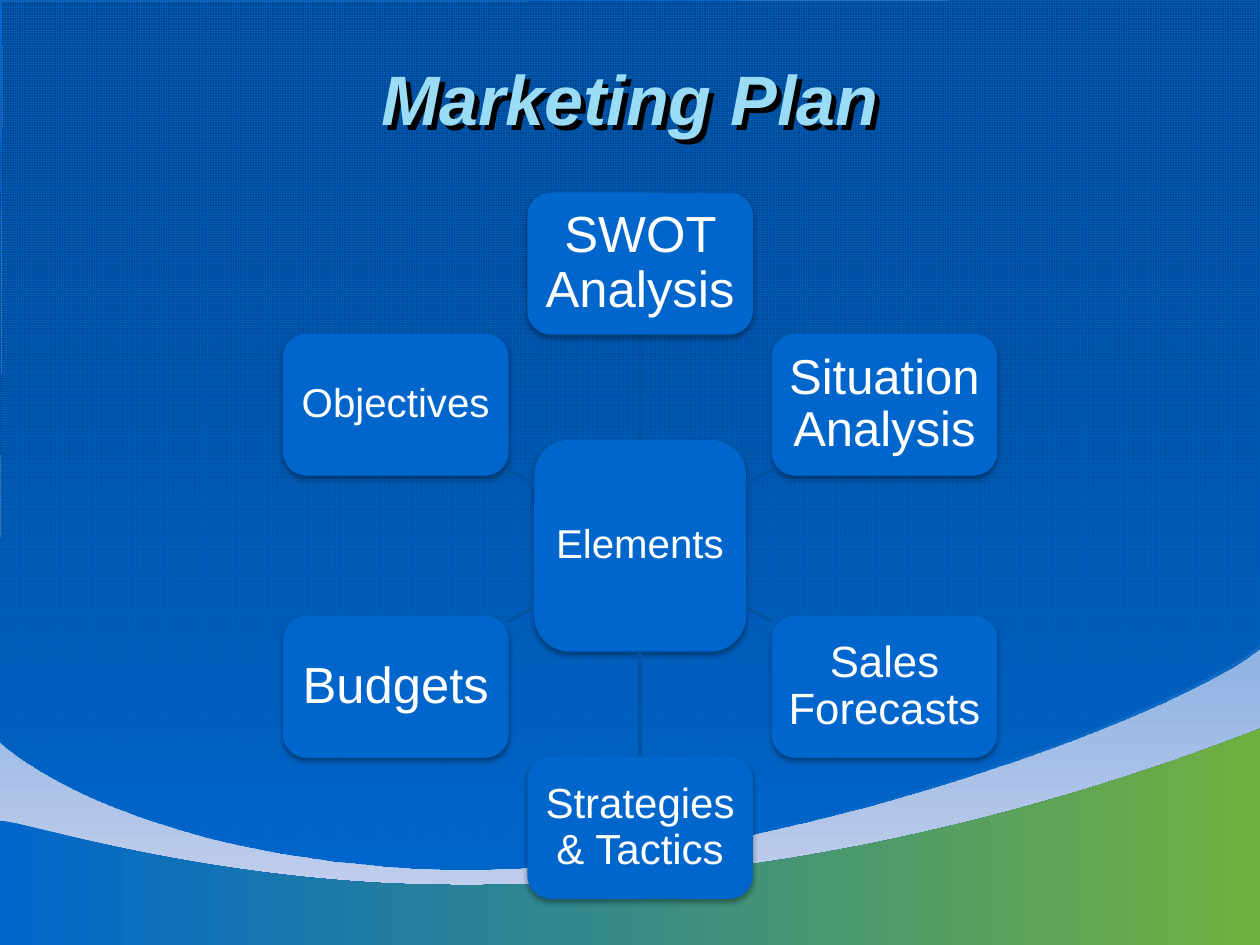
"""Build the Marketing Plan slide: a hub of elements on a wave background."""
from math import cos, radians, sin

from lxml.etree import SubElement
from pptx import Presentation
from pptx.dml.color import RGBColor
from pptx.enum.dml import MSO_PATTERN
from pptx.enum.shapes import MSO_CONNECTOR, MSO_SHAPE
from pptx.enum.text import MSO_ANCHOR, MSO_AUTO_SIZE, PP_ALIGN
from pptx.oxml import parse_xml
from pptx.oxml.ns import nsdecls, qn
from pptx.util import Pt

BLUE = RGBColor(0x00, 0x66, 0xCC)
DEEP_BLUE = RGBColor(0x00, 0x49, 0x92)
GRID_BLUE = RGBColor(0x00, 0x3D, 0x7B)
LINE_BLUE = RGBColor(0x00, 0x52, 0xA3)
PALE_BLUE = RGBColor(0xCD, 0xD4, 0xED)
TITLE_BLUE = RGBColor(0x9A, 0xDC, 0xF6)
GREEN = RGBColor(0x70, 0xB0, 0x40)
WHITE = RGBColor(0xFF, 0xFF, 0xFF)

CENTER_X, CENTER_Y, RADIUS = 365.8, 311.8, 161.2
HUB_SIZE, NODE_WIDTH, NODE_HEIGHT = 121, 128.9, 81.2
NODES = [("SWOT Analysis", 29), ("Situation Analysis", 28), ("Sales Forecasts", 25),
         ("Strategies & Tactics", 24), ("Budgets", 29), ("Objectives", 23)]

SKY_CURVE = [(-1.4, 422.6), (7.2, 431.3), (79.2, 488.2), (246.2, 495.4),
             (417.6, 502.6), (674.6, 408.2), (720.7, 367.9)]
SKY_CORNERS = [(720.7, -1.4), (0, 0), (0.7, 1.4)]
WAVE_CURVE = [(0, 469.4), (2.2, 465.8), (93.6, 498.2), (220.3, 504.7),
              (347, 510.5), (520.6, 493.9), (720.7, 416.2)]
WAVE_CORNERS = [(720, 542.2), (-1.4, 541.4)]


def shifted(points, offset):
    """Return the points moved right and down by the offset."""
    return [(x + offset, y + offset) for x, y in points]


def shadow_effect(blur, distance, angle, opacity):
    """Return an effect list with one black outer shadow."""
    return parse_xml(
        f'<a:effectLst {nsdecls("a")}><a:outerShdw blurRad="{Pt(blur)}" dist="{Pt(distance)}" '
        f'dir="{angle * 60000}" algn="ctr" rotWithShape="0"><a:srgbClr val="000000">'
        f'<a:alpha val="{opacity * 1000}"/></a:srgbClr></a:outerShdw></a:effectLst>')


class SlideBuilder:
    """Hold the style and the current slide, and draw its elements."""

    font = {"name": "Arial", "bold": False, "italic": False}

    def __init__(self, page):
        """Keep the slide to draw on."""
        self.page = page

    def gradient(self, fill, first, last, angle):
        """Fill with two colours along a counterclockwise angle."""
        fill.gradient()
        fill.gradient_angle = angle
        for stop, color, position in zip(fill.gradient_stops, (first, last), (0, 1)):
            stop.color.rgb = color
            stop.position = position

    def text(self, frame, wording, color, margin, **font):
        """Write one centred paragraph into a frame and return it."""
        frame_format = {"word_wrap": True, "auto_size": MSO_AUTO_SIZE.NONE,
                        "vertical_anchor": MSO_ANCHOR.MIDDLE}
        frame_format.update({f"margin_{side}": Pt(margin)
                             for side in ("left", "top", "right", "bottom")})
        for name, value in frame_format.items():
            setattr(frame, name, value)
        para = frame.paragraphs[0]
        para.alignment = PP_ALIGN.CENTER
        span = para.add_run()
        span.text = wording
        for name, value in {**self.font, **font}.items():
            setattr(span.font, name, value)
        span.font.color.rgb = color
        return para

    def title(self, wording):
        """Place the title above the background, with a hard shadow."""
        box = self.page.shapes.title
        place = {"left": Pt(36), "top": Pt(21.6), "width": Pt(648), "height": Pt(68.4)}
        for name, value in place.items():
            setattr(box, name, value)
        self.text(box.text_frame, wording, TITLE_BLUE, 3.6,
                  size=Pt(40), bold=True, italic=True)
        box.fill.background()
        box.element.spPr.append(shadow_effect(0, 4, 45, 100))
        self.page.shapes.element.append(box.element)

    def outline(self, curve, corners):
        """Draw a closed shape of Bezier curves, then straight edges."""
        pairs = [(Pt(x), Pt(y)) for x, y in curve + corners]
        builder = self.page.shapes.build_freeform(*pairs[0])
        builder.add_line_segments(pairs[1:], close=True)
        shape = builder.convert_to_shape()
        edges = list(shape.element.spPr.iter(qn("a:lnTo")))[:len(curve) - 1]
        for first in range(0, len(edges), 3):
            bezier = edges[first].makeelement(qn("a:cubicBezTo"))
            edges[first].addprevious(bezier)
            for edge in edges[first:first + 3]:
                bezier.append(edge[0])
                edge.getparent().remove(edge)
        shape.shadow.inherit = False
        shape.line.fill.background()
        return shape

    def background(self):
        """Draw the backdrop, the grid, the sky and the wave."""
        self.gradient(self.page.background.fill, BLUE, PALE_BLUE, 270)
        grid = self.outline(SKY_CURVE, SKY_CORNERS).fill
        grid.patterned()
        grid.pattern = MSO_PATTERN.SMALL_GRID
        grid.fore_color.rgb = BLUE
        grid.back_color.rgb = GRID_BLUE
        sky = self.outline(shifted(SKY_CURVE, 1.4), shifted(SKY_CORNERS, 1.4))
        self.gradient(sky.fill, DEEP_BLUE, BLUE, 270)
        top_color = next(sky.element.spPr.iter(qn("a:srgbClr")))
        SubElement(top_color, qn("a:alpha")).set("val", "46000")
        wave = self.outline(WAVE_CURVE, WAVE_CORNERS)
        self.gradient(wave.fill, BLUE, GREEN, 0)

    def node(self, wording, size, center_x, center_y, width, height):
        """Draw a rounded box with a soft shadow around a centre."""
        box = self.page.shapes.add_shape(
            MSO_SHAPE.ROUNDED_RECTANGLE, Pt(center_x - width / 2), Pt(center_y - height / 2),
            Pt(width), Pt(height))
        box.fill.solid()
        box.fill.fore_color.rgb = BLUE
        box.line.fill.background()
        box.element.spPr.append(shadow_effect(3.1, 1.8, 90, 35))
        para = self.text(box.text_frame, wording, WHITE, size * 0.2, size=Pt(size))
        para.line_spacing = 0.9

    def spoke(self, start, end):
        """Draw a straight line between two points."""
        line = self.page.shapes.add_connector(
            MSO_CONNECTOR.STRAIGHT, *(Pt(value) for value in (*start, *end)))
        line.line.color.rgb = LINE_BLUE
        line.line.width = Pt(2)
        SubElement(line.element.spPr, qn("a:effectLst"))

    def hub(self):
        """Draw the centre box and the ring of nodes joined to it."""
        self.node("Elements", 23, CENTER_X, CENTER_Y, HUB_SIZE, HUB_SIZE)
        for index, (wording, size) in enumerate(NODES):
            angle = radians(index * 360 / len(NODES) - 90)
            across, down = round(cos(angle), 6), round(sin(angle), 6)
            inner = HUB_SIZE / 2 / max(abs(across), abs(down))
            reach = min(half / abs(part) for half, part in
                        ((NODE_WIDTH / 2, across), (NODE_HEIGHT / 2, down)) if part)
            start, end, center = ((CENTER_X + distance * across, CENTER_Y + distance * down)
                                  for distance in (inner, RADIUS - reach, RADIUS))
            self.spoke(start, end)
            self.node(wording, size, *center, NODE_WIDTH, NODE_HEIGHT)


def main():
    """Build and save the deck."""
    deck = Presentation()
    deck.slide_width, deck.slide_height = Pt(720), Pt(540)
    builder = SlideBuilder(deck.slides.add_slide(deck.slide_layouts[5]))
    builder.background()
    builder.title("Marketing Plan")
    builder.hub()
    deck.save("out.pptx")


if __name__ == "__main__":
    main()
